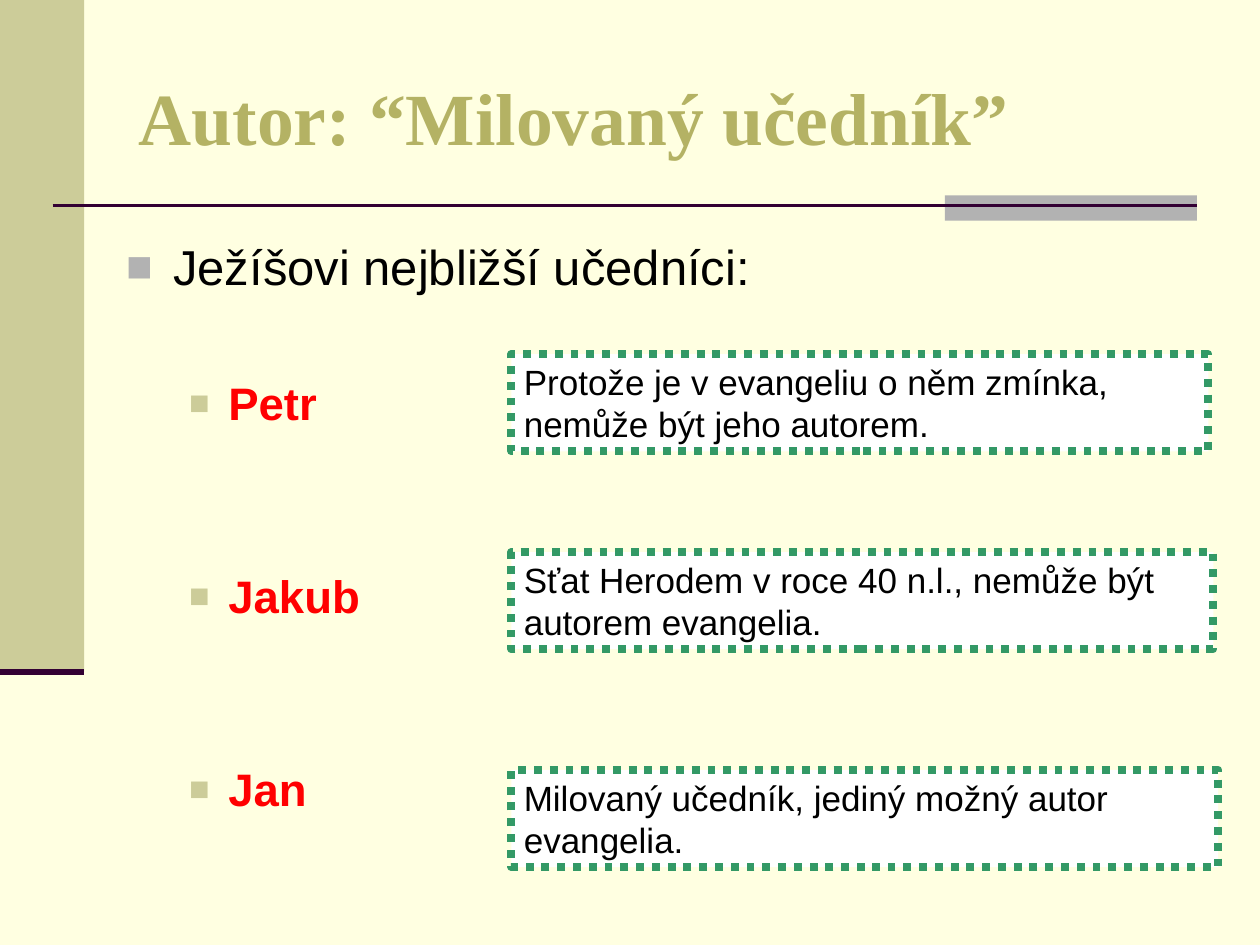
from lxml import etree
from pptx import Presentation
from pptx.dml.color import RGBColor
from pptx.enum.dml import MSO_LINE
from pptx.enum.shapes import MSO_CONNECTOR, MSO_SHAPE
from pptx.enum.text import MSO_ANCHOR, MSO_AUTO_SIZE, PP_ALIGN
from pptx.oxml.ns import qn
from pptx.util import Cm, Pt

RECT = MSO_SHAPE.RECTANGLE
STRAIGHT = MSO_CONNECTOR.STRAIGHT
DOTS = MSO_LINE.ROUND_DOT
LEFT = PP_ALIGN.LEFT
TOP, MIDDLE = MSO_ANCHOR.TOP, MSO_ANCHOR.MIDDLE
NO_FIT = MSO_AUTO_SIZE.NONE
GROW = MSO_AUTO_SIZE.SHAPE_TO_FIT_TEXT

TITLE = {"name": "Times New Roman", "size": Pt(42), "bold": True}
LEAD = {"name": "Arial", "size": Pt(28), "bold": False}
ITEM = {"name": "Arial", "size": Pt(26), "bold": True}
NOTE = {"name": "Arial", "size": Pt(20), "bold": False}

POINTS = [
    ("Ježíšovi nejbližší učedníci:", 0, 0),
    ("Petr", 1, 45.5),
    ("Jakub", 1, 79.2),
    ("Jan", 1, 79.2),
]
LEVELS = [
    (LEAD, "000000", "B2B2B2", 90, 0.95, 0.95),
    (ITEM, "FF0000", "CCCC99", 75, 2.06, 0.79),
]
NOTES = [
    (15.52, 14.25, "Milovaný učedník, jediný možný autor evangelia."),
    (11.13, 14.15, "Sťat Herodem v roce 40 n.l., nemůže být autorem evangelia."),
    (7.14, 14.05, "Protože je v evangeliu o něm zmínka, nemůže být jeho autorem."),
]


def paint(part, color):
    part.rgb = RGBColor.from_string(color)


def style(font, values, color):
    for key, value in values.items():
        setattr(font, key, value)
    paint(font.color, color)


def place(shape, box):
    for key, value in zip(("left", "top", "width", "height"), box):
        setattr(shape, key, Cm(value))


def block(slide, box, color):
    shape = slide.shapes.add_shape(RECT, *map(Cm, box))
    shape.shadow.inherit = False
    shape.fill.solid()
    paint(shape.fill.fore_color, color)
    shape.line.fill.background()
    return shape


def rule(slide, left, top, width, weight):
    line = slide.shapes.add_connector(
        STRAIGHT, Cm(left), Cm(top), Cm(left + width), Cm(top))
    paint(line.line.color, "330033")
    line.line.width = Pt(weight)
    etree.SubElement(line.element.spPr, qn("a:effectLst"))


def side(slide, box):
    left, top, width, height = box
    block(slide, box, "CCCC99")
    rule(slide, left, top + height, width, 3.5)


def band(slide, box):
    left, top, width, height = box
    block(slide, (left + width - 5.08, top, 5.08, height), "B2B2B2")
    rule(slide, left, top + 0.2, width, 1.5)


def head(slide, box):
    title = slide.shapes.title
    place(title, box)
    slide.shapes.element.append(title.element)
    frame = title.text_frame
    frame.text = "Autor: “Milovaný učedník”"
    frame.auto_size = NO_FIT
    frame.vertical_anchor = MIDDLE
    para = frame.paragraphs[0]
    para.alignment = LEFT
    style(para.runs[0].font, TITLE, "B4B264")


def bullet(para, color, size, margin, hang):
    props = para._p.get_or_add_pPr()
    props.set("marL", str(Cm(margin)))
    props.set("indent", str(-Cm(hang)))
    tint = etree.SubElement(props, qn("a:buClr"))
    etree.SubElement(tint, qn("a:srgbClr"), val=color)
    etree.SubElement(props, qn("a:buSzPct"), val=str(size * 1000))
    etree.SubElement(props, qn("a:buFont"), typeface="Arial")
    etree.SubElement(props, qn("a:buChar"), char="■")


def points(slide, box):
    body = slide.placeholders[1]
    place(body, box)
    slide.shapes.element.append(body.element)
    frame = body.text_frame
    frame.text = "\n".join(text for text, _, _ in POINTS)
    frame.auto_size = NO_FIT
    frame.vertical_anchor = TOP
    frame.margin_top = Cm(0.25)
    for para, (_, level, gap) in zip(frame.paragraphs, POINTS):
        font, color, *mark = LEVELS[level]
        para.level = level
        bullet(para, *mark)
        para.alignment = LEFT
        para.space_before = Pt(gap)
        style(para.runs[0].font, font, color)


def note(slide, box, text):
    shape = block(slide, box, "FFFFFF")
    paint(shape.line.color, "339966")
    shape.line.width = Pt(4.5)
    shape.line.dash_style = DOTS
    frame = shape.text_frame
    frame.word_wrap = True
    frame.auto_size = GROW
    frame.vertical_anchor = TOP
    frame.text = text
    para = frame.paragraphs[0]
    para.alignment = LEFT
    style(para.runs[0].font, NOTE, "000000")


def main():
    deck = Presentation()
    deck.slide_width, deck.slide_height = Cm(25.4), Cm(19.05)
    slide = deck.slides.add_slide(deck.slide_layouts[1])
    slide.background.fill.solid()
    paint(slide.background.fill.fore_color, "FFFFE1")
    side(slide, (0, 0, 1.7, 13.54))
    band(slide, (1.06, 3.94, 23.07, 0.51))
    head(slide, (2.54, 0.76, 21.59, 3.18))
    points(slide, (2.29, 4.52, 13.21, 12.57))
    for top, width, text in NOTES:
        note(slide, (10.31, top, width, 1.96), text)
    deck.save("out.pptx")


if __name__ == "__main__":
    main()
